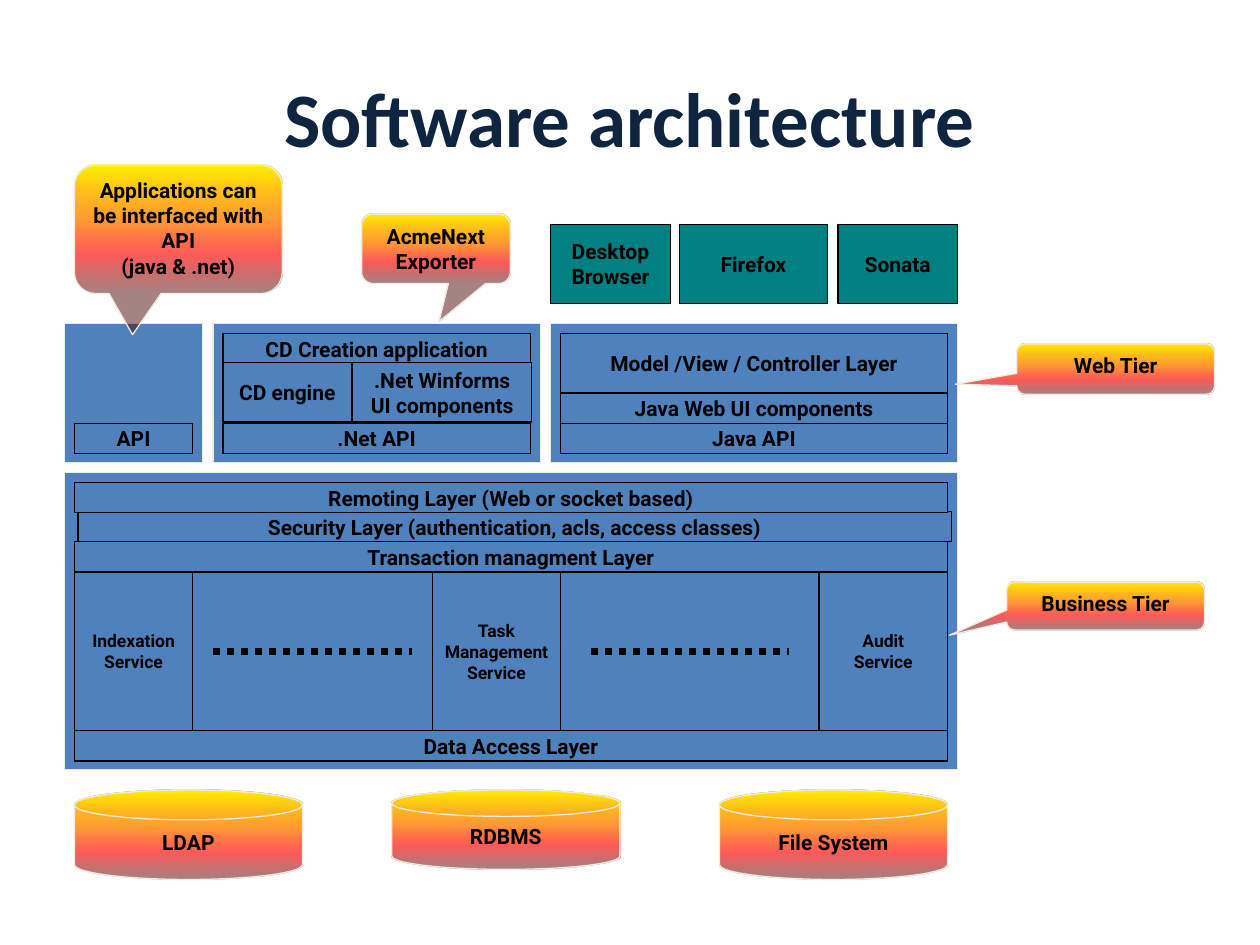
from lxml import etree
from pptx import Presentation
from pptx.dml.color import RGBColor
from pptx.enum.dml import MSO_LINE_DASH_STYLE as Dash
from pptx.enum.shapes import MSO_CONNECTOR, MSO_SHAPE as Shape
from pptx.enum.text import MSO_ANCHOR as Anchor, PP_ALIGN as Align
from pptx.oxml import parse_xml
from pptx.oxml.ns import nsdecls, qn
from pptx.util import Inches, Pt

THEME = {
    "navy": "0F243E", "blue": "4F81BD", "teal": "008080",
    "black": "000000", "cream": "EEECE1",
    "sunset": [(0, "FFF200", 100), (45, "FF7A00", 78), (70, "FF0300", 65), (100, "4D0808", 50)],
    "title_font": "Calibri", "font": "Roboto",
    "title": 44, "label": 12, "small": 10, "line": 0.75, "dots": 4,
}

TITLE = "Software architecture"
ROW = 0.24
PANELS = [(0.51, 3.75, 7.09, 2.36), (4.37, 2.57, 3.23, 1.1),
          (1.69, 2.57, 2.6, 1.1), (0.51, 2.57, 1.1, 1.1)]
STORES = [("LDAP", 0.59, 0.71), ("RDBMS", 3.11, 0.63), ("File System", 5.71, 0.71)]
BROWSERS = [("Desktop\nBrowser", 4.37, 0.95), ("Firefox", 5.39, 1.18), ("Sonata", 6.65, 0.95)]
SERVICES = [("Indexation\nService", 0.59, 0.94), ("Task\nManagement\nService", 3.43, 1.02),
            ("Audit\nService", 6.5, 1.02)]
SERVICE_TOP, SERVICE_HEIGHT = 4.54, 1.26
SECURITY = ("Security Layer (authentication, acls, access classes)", 0.62, 4.06, 6.93, ROW)
STACKS = [
    (0.59, 3.83, 6.93, [("Remoting Layer (Web or socket based)", ROW)]),
    (0.59, 4.3, 6.93, [("Transaction managment Layer", ROW)]),
    (0.59, 5.8, 6.93, [("Data Access Layer", ROW)]),
    (4.45, 2.65, 3.07, [("Model /View / Controller Layer", 0.47),
                        ("Java Web UI components", ROW), ("Java API", ROW)]),
    (1.77, 2.65, 2.44, [("CD Creation application", ROW)]),
    (1.77, 2.88, 1.02, [("CD engine", 0.47)]),
    (2.8, 2.88, 1.42, [(".Net Winforms\nUI components", 0.47)]),
    (1.77, 3.36, 2.44, [(".Net API", ROW)]),
    (0.59, 3.36, 0.94, [("API", ROW)]),
]
CALLOUTS = [
    ("Business Tier", (7.99, 4.62, 1.57, 0.38), (-0.79, 0.61)),
    ("Web Tier", (8.07, 2.73, 1.57, 0.4), (-0.81, 0.3)),
    ("AcmeNext\nExporter", (2.87, 1.7, 1.18, 0.55), (0.02, 1.05)),
    ("Applications can be interfaced with API\n(java & .net)", (0.59, 1.31, 1.65, 1.02), (-0.22, 0.82)),
]
DOTTED_LINES = [(1.69, 3.27), (4.69, 6.26)]


def color(name):
    return RGBColor.from_string(THEME[name])


def write(shape, text, size="label", font="font", ink="black", anchor=Anchor.MIDDLE, wrap=False):
    frame = shape.text_frame
    frame.text = text
    frame.word_wrap = wrap
    frame.vertical_anchor = anchor
    for para in frame.paragraphs:
        para.alignment = Align.CENTER
        for span in para.runs:
            span.font.name = THEME[font]
            span.font.size = Pt(THEME[size])
            span.font.bold = True
            span.font.color.rgb = color(ink)


def fill_sunset(shape):
    shape.fill.gradient()
    old = shape._element.spPr.find(qn("a:gradFill"))
    stops = "".join(
        f'<a:gs pos="{place * 1000}"><a:srgbClr val="{tone}">'
        f'<a:alpha val="{alpha * 1000}"/></a:srgbClr></a:gs>'
        for place, tone, alpha in THEME["sunset"])
    new = parse_xml(f'<a:gradFill {nsdecls("a")} rotWithShape="1"><a:gsLst>{stops}</a:gsLst>'
                    '<a:lin ang="5400000" scaled="0"/></a:gradFill>')
    old.getparent().replace(old, new)


def add_box(slide, place, fill="blue", line="black", kind=Shape.RECTANGLE, text="", **style):
    box = slide.shapes.add_shape(kind, *map(Inches, place))
    box.shadow.inherit = False
    if fill == "sunset":
        fill_sunset(box)
    else:
        box.fill.solid()
        box.fill.fore_color.rgb = color(fill)
    box.line.color.rgb = color(line)
    box.line.width = Pt(THEME["line"])
    if text:
        write(box, text, **style)
    return box


def add_dots(slide, start, end, height):
    dots = slide.shapes.add_connector(MSO_CONNECTOR.STRAIGHT, *map(Inches, (start, height, end, height)))
    dots.line.color.rgb = color("black")
    dots.line.width = Pt(THEME["dots"])
    dots.line.dash_style = Dash.ROUND_DOT
    etree.SubElement(dots._element.spPr, qn("a:effectLst"))


def main():
    deck = Presentation()
    deck.slide_width, deck.slide_height = Inches(10), Inches(7.5)
    slide = deck.slides.add_slide(deck.slide_layouts[5])
    title = slide.shapes.title
    title.left, title.top, title.width, title.height = map(Inches, (0.5, 0.3, 9, 1.25))
    write(title, TITLE, size="title", font="title_font", ink="navy", wrap=True)

    for place in PANELS:
        add_box(slide, place, line="cream")
    for text, left, height in STORES:
        add_box(slide, (left, 6.27, 1.81, height), "sunset", "cream",
                Shape.FLOWCHART_MAGNETIC_DISK, text)
    add_box(slide, SECURITY[1:], text=SECURITY[0])
    for left, top, width, rows in STACKS:
        for text, height in rows:
            add_box(slide, (left, top, width, height), text=text)
            top += height
    for text, left, width in SERVICES:
        add_box(slide, (left, SERVICE_TOP, width, SERVICE_HEIGHT), text=text, size="small")
    for start, end in DOTTED_LINES:
        add_dots(slide, start, end, SERVICE_TOP + SERVICE_HEIGHT / 2)
    for text, left, width in BROWSERS:
        add_box(slide, (left, 1.78, width, 0.63), "teal", text=text)
    for text, place, tip in CALLOUTS:
        callout = add_box(slide, place, "sunset", "cream", Shape.ROUNDED_RECTANGULAR_CALLOUT,
                          text, anchor=Anchor.TOP, wrap=True)
        callout.adjustments[0], callout.adjustments[1] = tip

    deck.save("out.pptx")


if __name__ == "__main__":
    main()
